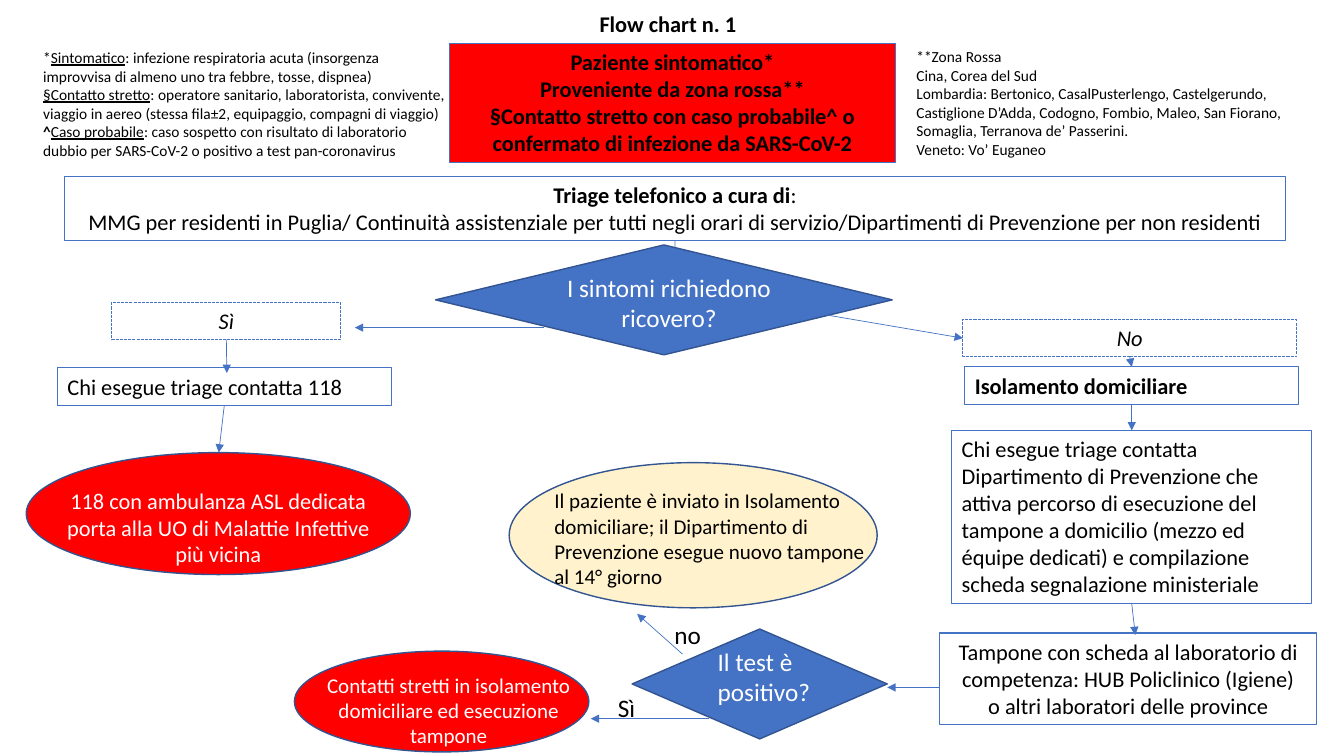
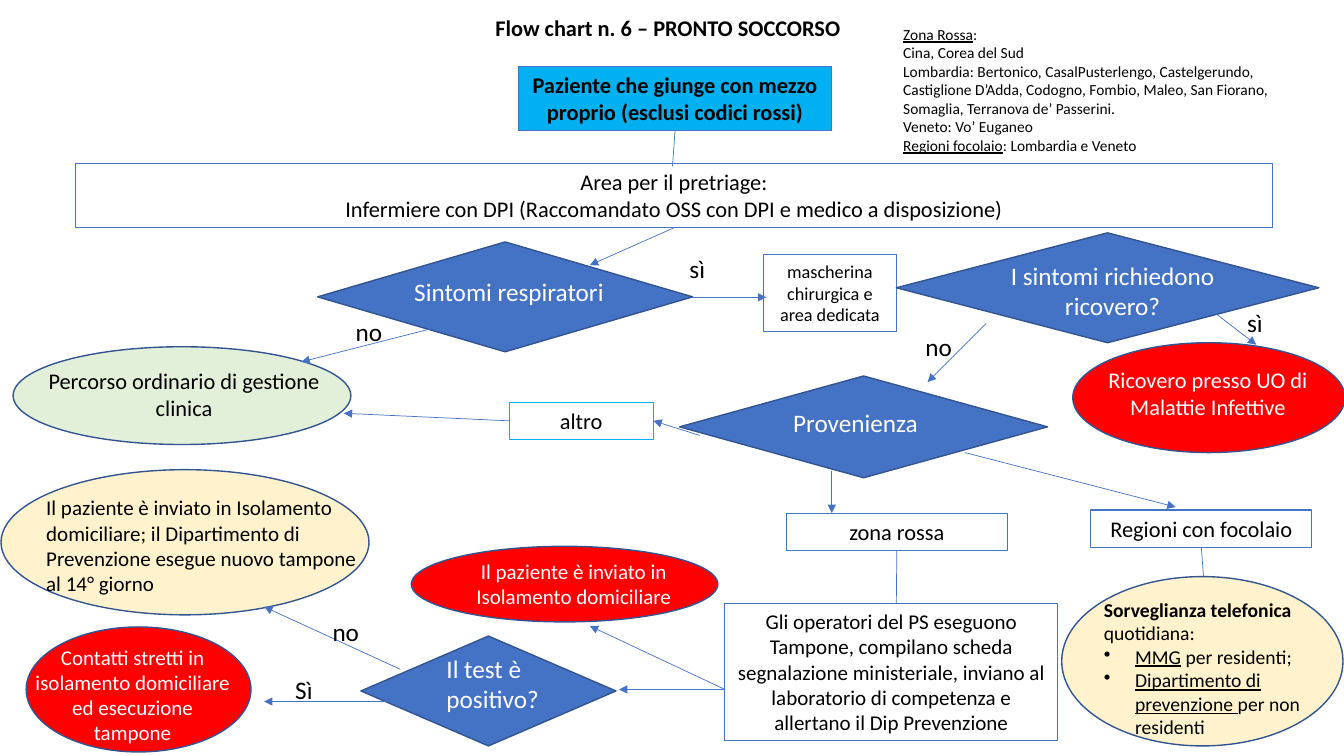
from dataclasses import dataclass

import lxml.etree
import pptx
import pptx.dml.color
import pptx.enum.dml
import pptx.enum.shapes
import pptx.enum.text
import pptx.oxml.ns
import pptx.util

PX = 9144  # EMU per px: 100 px to the inch
SHAPE = pptx.enum.shapes.MSO_SHAPE
LEFT = pptx.enum.text.PP_ALIGN.LEFT
CENTER = pptx.enum.text.PP_ALIGN.CENTER
TOP_SIDE, LEFT_SIDE, BOTTOM_SIDE, RIGHT_SIDE = range(4)


@dataclass(frozen=True)
class Theme:
    font: str = "Calibri"
    black: str = "000000"
    white: str = "FFFFFF"
    blue: str = "4472C4"
    dark_blue: str = "325491"
    cyan: str = "00B0F0"
    red: str = "FF0000"
    cream: str = "FFF2CC"
    green: str = "E2F0D9"
    note: int = 11
    mask: int = 13
    watch: int = 14
    small: int = 15
    body: int = 16
    decision: int = 18


THEME = Theme()

# Wording used on both slides
ZONE_PLACES = [
    "Cina, Corea del Sud",
    "Lombardia: Bertonico, CasalPusterlengo, Castelgerundo, Castiglione D’Adda, "
    "Codogno, Fombio, Maleo, San Fiorano, Somaglia, Terranova de’ Passerini.",
    "Veneto: Vo’ Euganeo",
]
CLOSE_CONTACTS = "Contatti stretti in isolamento domiciliare ed esecuzione tampone"
RETEST = ("Il paziente è inviato in Isolamento domiciliare; il Dipartimento di "
          "Prevenzione esegue nuovo tampone al 14° giorno")


def emu(*lengths):
    return [pptx.util.Emu(length * PX) for length in lengths]


def rgb(color):
    return pptx.dml.color.RGBColor.from_string(color)


# Text
def write(shape, text, size=THEME.body, color=THEME.black, style="", align=LEFT,
          bullets_from=None):
    """Text is one line or a list of lines; a line is a string or a list of
    runs, each a string or a (string, style) pair with style letters b, i, u."""
    frame = shape.text_frame
    frame.word_wrap = True
    frame.vertical_anchor = pptx.enum.text.MSO_ANCHOR.TOP
    for number, line in enumerate([text] if isinstance(text, str) else text):
        paragraph = frame.paragraphs[0] if number == 0 else frame.add_paragraph()
        paragraph.alignment = align
        if bullets_from is not None and number >= bullets_from:
            add_bullet(paragraph, indent=31)
        for part in [line] if isinstance(line, str) else line:
            words, marks = (part, style) if isinstance(part, str) else part
            run = paragraph.add_run()
            run.text = words
            font = run.font
            font.name, font.size = THEME.font, pptx.util.Pt(size)
            font.color.rgb = rgb(color)
            font.bold, font.italic = "b" in marks, "i" in marks
            font.underline = "u" in marks


def add_bullet(paragraph, indent):
    properties = paragraph._p.get_or_add_pPr()
    properties.set("marL", str(indent * PX))
    properties.set("indent", str(-indent * PX))
    bullet = lxml.etree.SubElement(properties, pptx.oxml.ns.qn("a:buChar"))
    bullet.set("char", "•")


def label(slide, area, text, **text_format):
    write(slide.shapes.add_textbox(*emu(*area)), text, **text_format)


def title(slide, top, text):
    label(slide, (114, top, 1097, 64), text, style="b", align=CENTER)


def answer(slide, left, top, text):
    label(slide, (left, top, 66, 40), text, size=THEME.decision)


# Flow chart elements
def outline(slide, preset, area, fill, line, width):
    shape = slide.shapes.add_shape(preset, *emu(*area))
    shape.shadow.inherit = False
    if fill:
        shape.fill.solid()
        shape.fill.fore_color.rgb = rgb(fill)
    else:
        shape.fill.background()
    shape.line.color.rgb = rgb(line)
    shape.line.width = pptx.util.Pt(width)
    return shape


def step(slide, area, text, fill=None, line=THEME.blue, dashed=False, align=CENTER,
         **text_format):
    box = outline(slide, SHAPE.RECTANGLE, area, fill, line, 0.75)
    if dashed:
        box.line.dash_style = pptx.enum.dml.MSO_LINE.SQUARE_DOT
    write(box, text, align=align, **text_format)
    return box


def decision(slide, area, caption_area, text, align=CENTER):
    outline(slide, SHAPE.DIAMOND, area, THEME.blue, THEME.dark_blue, 1)
    label(slide, caption_area, text, size=THEME.decision, color=THEME.white, align=align)


def outcome(slide, area, caption_area, text, fill=THEME.red, color=THEME.white,
            align=CENTER, **text_format):
    outline(slide, SHAPE.OVAL, area, fill, THEME.dark_blue, 1)
    label(slide, caption_area, text, color=color, align=align, **text_format)


def side_middle(box, side):
    x = {LEFT_SIDE: box.left, RIGHT_SIDE: box.left + box.width}
    y = {TOP_SIDE: box.top, BOTTOM_SIDE: box.top + box.height}
    return (x.get(side, box.left + box.width // 2),
            y.get(side, box.top + box.height // 2))


def link(slide, start, end, arrow=True):
    """Each end is an (x, y) point in px or a (box, side) pair."""
    joins = [not isinstance(place[0], int) for place in (start, end)]
    points = [side_middle(*place) if joined else emu(*place)
              for place, joined in zip((start, end), joins)]
    connector = slide.shapes.add_connector(
        pptx.enum.shapes.MSO_CONNECTOR.STRAIGHT, *points[0], *points[1])
    if joins[0]:
        connector.begin_connect(*start)
    if joins[1]:
        connector.end_connect(*end)
    connector.line.color.rgb = rgb(THEME.blue)
    connector.line.width = pptx.util.Pt(0.5)
    if arrow:
        line = connector.line._get_or_add_ln()
        lxml.etree.SubElement(line, pptx.oxml.ns.qn("a:tailEnd")).set("type", "triangle")
    lxml.etree.SubElement(connector._element.spPr, pptx.oxml.ns.qn("a:effectLst"))


# Parts that both flow charts contain
def admission_decision(slide, left, top, width):
    decision(slide, (left, top, width, 109), (left + width // 2 - 120, top + 22, 251, 71),
             "I sintomi richiedono ricovero?")


def test_decision(slide, left, top):
    decision(slide, (left, top, 253, 109), (left + 75, top + 12, 123, 71),
             "Il test è positivo?", align=LEFT)


def retest_outcome(slide, left, top):
    outcome(slide, (left, top, 365, 144), (left + 35, top + 20, 340, 111), RETEST,
            fill=THEME.cream, color=THEME.black, size=THEME.small, align=LEFT)


def contacts_outcome(slide, area, caption_area):
    outcome(slide, area, caption_area, CLOSE_CONTACTS, size=THEME.small)


# Slides
def phone_triage_slide(slide):
    title(slide, 5, "Flow chart n. 1")
    label(slide, (33, 43, 424, 121), [
        ["*", ("Sintomatico", "u"), ": infezione respiratoria acuta (insorgenza "
         "improvvisa di almeno uno tra febbre, tosse, dispnea)"],
        [("§Contatto stretto", "u"), ": operatore sanitario, laboratorista, convivente, "
         "viaggio in aereo (stessa fila±2, equipaggio, compagni di viaggio)"],
        [("^", "b"), ("Caso probabile", "u"), ": caso sospetto con risultato di "
         "laboratorio dubbio per SARS-CoV-2 o positivo a test pan-coronavirus"],
    ], size=THEME.note)
    label(slide, (899, 42, 402, 121), ["**Zona Rossa", *ZONE_PLACES], size=THEME.note)

    # Entry and telephone triage
    step(slide, (446, 43, 442, 118), [
        "Paziente sintomatico*",
        "Proveniente da zona rossa**",
        "§Contatto stretto con caso probabile^ o confermato di infezione da SARS-CoV-2",
    ], fill=THEME.red, style="b")
    triage = step(slide, (64, 175, 1211, 64), [
        [("Triage telefonico a cura di", "b"), ":"],
        "MMG per residenti in Puglia/ Continuità assistenziale per tutti negli orari di "
        "servizio/Dipartimenti di Prevenzione per non residenti",
    ])
    link(slide, (triage, BOTTOM_SIDE), (670, 287), arrow=False)
    admission_decision(slide, 432, 243, 453)

    # Admission branch
    yes = step(slide, (111, 300, 227, 37), "Sì", dashed=True, style="i")
    call = step(slide, (57, 365, 331, 37), "Chi esegue triage contatta 118", align=LEFT)
    outcome(slide, (26, 449, 381, 121), (51, 478, 331, 91),
            "118 con ambulanza ASL dedicata porta alla UO di Malattie Infettive più vicina")
    link(slide, (540, 325), (352, 325))
    link(slide, (yes, BOTTOM_SIDE), (225, 370))
    link(slide, (call, BOTTOM_SIDE), (217, 449))

    # Home isolation branch
    no = step(slide, (955, 317, 331, 37), "No", dashed=True, style="i")
    isolation = step(slide, (957, 364, 331, 37), "Isolamento domiciliare",
                     style="b", align=LEFT)
    swab = step(slide, (944, 427, 357, 172),
                "Chi esegue triage contatta Dipartimento di Prevenzione che attiva percorso "
                "di esecuzione del tampone a domicilio (mezzo ed équipe dedicati) e "
                "compilazione scheda segnalazione ministeriale", align=LEFT)
    step(slide, (932, 628, 374, 91), [
        "Tampone con scheda al laboratorio di competenza: HUB Policlinico (Igiene)",
        "o altri laboratori delle province",
    ])
    link(slide, (764, 303), (no, LEFT_SIDE))
    link(slide, (no, BOTTOM_SIDE), (isolation, TOP_SIDE))
    link(slide, (isolation, BOTTOM_SIDE), (swab, TOP_SIDE))
    link(slide, (swab, BOTTOM_SIDE), (1126, 630))

    # Test result
    contacts_outcome(slide, (292, 646, 292, 100), (308, 662, 274, 86))
    retest_outcome(slide, 505, 459)
    test_decision(slide, 627, 624)
    link(slide, (932, 682), (880, 682))
    link(slide, (703, 713), (586, 713))
    link(slide, (677, 649), (632, 609))
    answer(slide, 603, 682, "Sì")
    answer(slide, 659, 609, "no")


def emergency_room_slide(slide):
    title(slide, 9, "Flow chart n. 6 – PRONTO SOCCORSO")
    label(slide, (886, 20, 402, 140), [
        [("Zona Rossa", "u"), ":"], *ZONE_PLACES,
        [("Regioni focolaio", "u"), ": Lombardia e Veneto"],
    ], size=THEME.note)

    # Entry and pretriage
    patient = step(slide, (514, 66, 311, 64),
                   "Paziente che giunge con mezzo proprio (esclusi codici rossi)",
                   fill=THEME.cyan, style="b")
    pretriage = step(slide, (75, 162, 1187, 64), [
        "Area per il pretriage:",
        "Infermiere con DPI (Raccomandato OSS con DPI e medico a disposizione)",
    ])
    link(slide, (patient, BOTTOM_SIDE), (667, 165), arrow=False)

    # Symptoms
    decision(slide, (315, 240, 372, 109), (401, 269, 228, 40), "Sintomi respiratori",
             align=LEFT)
    step(slide, (757, 253, 132, 76), "mascherina chirurgica e area dedicata",
         size=THEME.mask)
    outcome(slide, (13, 344, 335, 97), (33, 359, 299, 64),
            "Percorso ordinario di gestione clinica", fill=THEME.green, color=THEME.black)
    admission_decision(slide, 889, 231, 419)
    outcome(slide, (1064, 340, 270, 109), (1057, 358, 282, 64),
            "Ricovero presso UO di Malattie Infettive")
    link(slide, (pretriage, BOTTOM_SIDE), (585, 263))
    link(slide, (436, 324), (299, 359))
    link(slide, (687, 295), (760, 295))
    link(slide, (978, 321), (920, 379))
    link(slide, (1203, 309), (1246, 342))
    answer(slide, 343, 309, "no")
    answer(slide, 674, 246, "sì")
    answer(slide, 908, 324, "no")
    answer(slide, 1227, 300, "sì")

    # Origin of the patient
    decision(slide, (674, 373, 365, 101), (723, 399, 251, 40), "Provenienza")
    other = step(slide, (505, 399, 143, 37), "altro", line=THEME.cyan)
    red_zone = step(slide, (780, 509, 219, 37), "zona rossa")
    outbreak = step(slide, (1082, 506, 219, 37), "Regioni con focolaio")
    link(slide, (694, 432), (other, RIGHT_SIDE))
    link(slide, (other, LEFT_SIDE), (341, 410))
    link(slide, (825, 467), (825, 509))
    link(slide, (957, 449), (1166, 503))
    link(slide, (red_zone, BOTTOM_SIDE), (889, 599), arrow=False)
    link(slide, (outbreak, BOTTOM_SIDE), (1195, 590), arrow=False)
    outcome(slide, (1053, 572, 279, 168), (1085, 588, 255, 151), [
        [("Sorveglianza telefonica", "b"), " quotidiana:"],
        [("MMG", "u"), " per residenti;"],
        [("Dipartimento di prevenzione ", "u"), "per non residenti"],
    ], fill=THEME.cream, color=THEME.black, size=THEME.watch, align=LEFT, bullets_from=1)

    # Swab and test result
    step(slide, (719, 599, 330, 136),
         "Gli operatori del PS eseguono Tampone, compilano scheda segnalazione "
         "ministeriale, inviano al laboratorio di competenza e allertano il Dip "
         "Prevenzione", size=THEME.small)
    outcome(slide, (408, 542, 304, 75), (430, 549, 278, 61),
            "Il paziente è inviato in Isolamento domiciliare", size=THEME.small)
    contacts_outcome(slide, (26, 622, 223, 124), (24, 634, 215, 111))
    retest_outcome(slide, 1, 466)
    test_decision(slide, 358, 631)
    link(slide, (719, 684), (614, 684))
    link(slide, (719, 684), (585, 621))
    link(slide, (391, 696), (262, 696))
    link(slide, (397, 664), (262, 602))
    answer(slide, 283, 664, "Sì")
    answer(slide, 320, 607, "no")


def main():
    deck = pptx.Presentation()
    deck.slide_width, deck.slide_height = emu(1333, 750)
    blank = deck.slide_layouts[6]
    for build in (phone_triage_slide, emergency_room_slide):
        build(deck.slides.add_slide(blank))
    deck.save("out.pptx")


if __name__ == "__main__":
    main()
